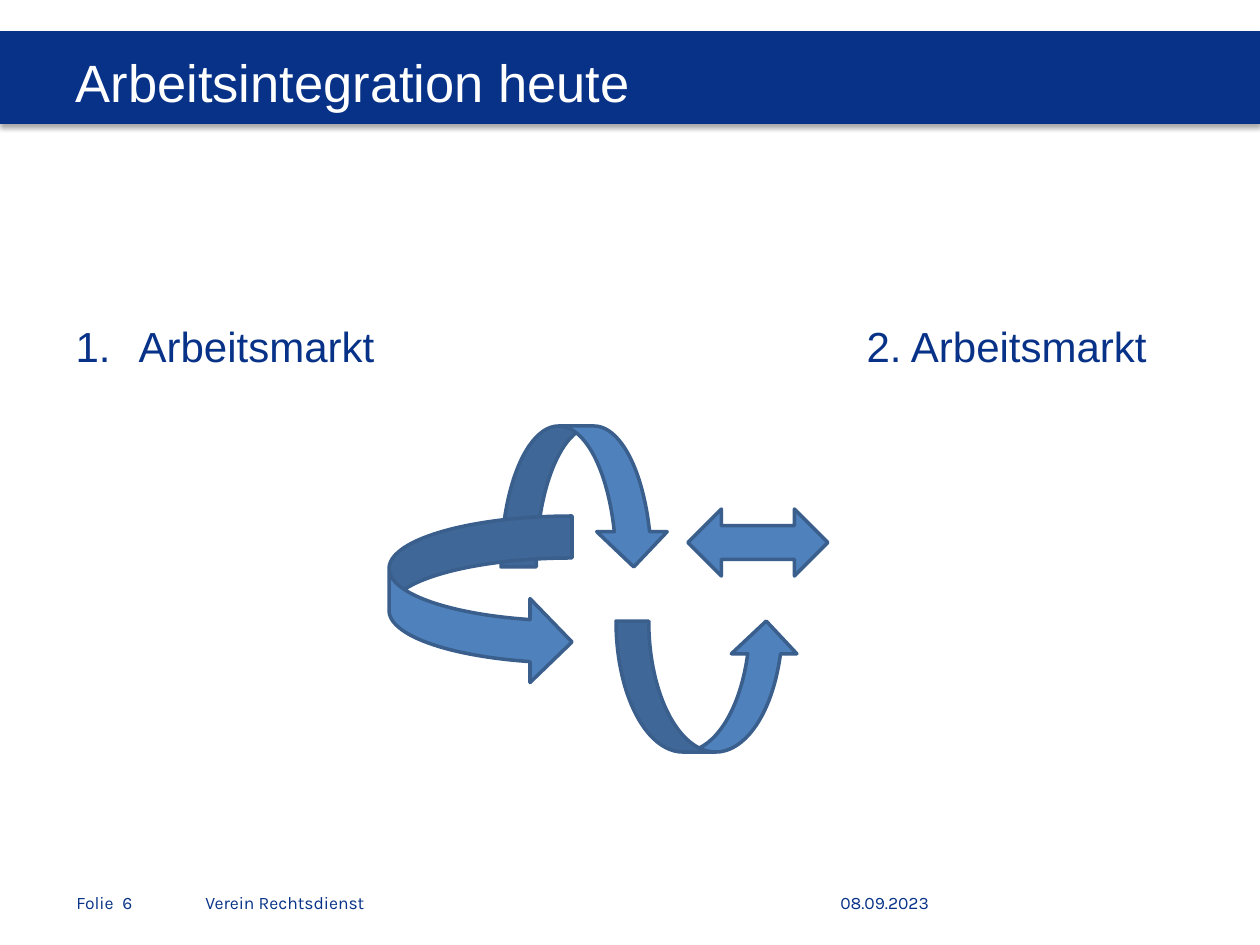
from dataclasses import dataclass

from lxml import etree
from pptx import Presentation
from pptx.dml.color import RGBColor
from pptx.enum.shapes import MSO_SHAPE
from pptx.enum.text import MSO_ANCHOR, MSO_AUTO_SIZE, PP_ALIGN
from pptx.oxml import parse_xml
from pptx.oxml.ns import nsdecls, qn
from pptx.util import Emu, Pt

EMU_PER_PX = 914400 / 126
RECTANGLE = MSO_SHAPE.RECTANGLE
CURVED_DOWN = MSO_SHAPE.CURVED_DOWN_ARROW
CURVED_RIGHT = MSO_SHAPE.CURVED_RIGHT_ARROW
CURVED_UP = MSO_SHAPE.CURVED_UP_ARROW
LEFT_RIGHT = MSO_SHAPE.LEFT_RIGHT_ARROW
MIDDLE, TOP = MSO_ANCHOR.MIDDLE, MSO_ANCHOR.TOP
LEFT = PP_ALIGN.LEFT
NO_AUTOFIT = MSO_AUTO_SIZE.NONE


@dataclass(frozen=True)
class Theme:
    navy: str = "073288"
    white: str = "FFFFFF"
    arrow_fill: str = "4F81BD"
    arrow_line: str = "3A5F8C"
    main_font: str = "Arial"
    footer_font: str = "Karla"
    title_size: int = 30
    body_size: int = 24
    footer_size: int = 10
    arrow_line_width: int = 2


@dataclass(frozen=True)
class Area:
    left: int
    top: int
    width: int
    height: int


@dataclass(frozen=True)
class Arrow:
    preset: MSO_SHAPE
    area: Area


@dataclass(frozen=True)
class Footer:
    text: str
    area: Area
    tab: int = 0


THEME = Theme()
ARROWS = [
    Arrow(CURVED_DOWN, Area(501, 426, 168, 141)),
    Arrow(CURVED_RIGHT, Area(389, 516, 183, 168)),
    Arrow(CURVED_UP, Area(616, 621, 183, 131)),
    Arrow(LEFT_RIGHT, Area(688, 509, 140, 67)),
]
FOOTERS = [
    Footer("08.09.2023", Area(828, 878, 139, 50)),
    Footer("Verein Rechtsdienst", Area(193, 878, 627, 50)),
    Footer("Folie\t6", Area(64, 878, 118, 50), tab=46),
]


def px(value: int) -> Emu:
    return Emu(round(value * EMU_PER_PX))


def bounds(area: Area) -> tuple:
    return px(area.left), px(area.top), px(area.width), px(area.height)


def place(shape, area: Area) -> None:
    shape.left, shape.top, shape.width, shape.height = bounds(area)


def add_tab(para, position: int) -> None:
    tabs = etree.SubElement(para._p.get_or_add_pPr(), qn("a:tabLst"))
    etree.SubElement(tabs, qn("a:tab"), pos=str(px(position)), algn="l")


def write(box, text: str, font: str, size: int, colour: str, anchor=MIDDLE):
    frame = box.text_frame
    frame.word_wrap = True
    frame.auto_size = NO_AUTOFIT
    frame.vertical_anchor = anchor
    para = frame.paragraphs[0]
    para.alignment = LEFT
    para.space_before = Pt(0)
    span = para.add_run()
    span.text = text
    span.font.name = font
    span.font.size = Pt(size)
    span.font.color.rgb = RGBColor.from_string(colour)
    return para


def add_band(page) -> None:
    band = page.shapes.add_shape(RECTANGLE, *bounds(Area(0, 31, 1260, 93)))
    band.fill.solid()
    band.fill.fore_color.rgb = RGBColor.from_string(THEME.navy)
    band.line.fill.background()
    band._element.spPr.append(parse_xml(
        f'<a:effectLst {nsdecls("a")}>'
        '<a:outerShdw blurRad="39370" dist="22860" dir="5400000" rotWithShape="0">'
        '<a:srgbClr val="000000"><a:alpha val="35000"/></a:srgbClr>'
        '</a:outerShdw></a:effectLst>'))
    page.shapes._spTree.insert(2, band._element)


def fill_title(page) -> None:
    title = page.shapes.title
    place(title, Area(63, 38, 1134, 87))
    write(title, "Arbeitsintegration heute", THEME.main_font, THEME.title_size, THEME.white)


def fill_body(page) -> None:
    body = page.placeholders[1]
    place(body, Area(63, 214, 1134, 590))
    body.text_frame.margin_top = px(106)
    para = write(body, "Arbeitsmarkt\t2. Arbeitsmarkt", THEME.main_font,
                 THEME.body_size, THEME.navy, TOP)
    properties = para._p.get_or_add_pPr()
    properties.set("marL", str(px(63)))
    properties.set("indent", str(px(-63)))
    colour = etree.SubElement(properties, qn("a:buClr"))
    etree.SubElement(colour, qn("a:srgbClr"), val=THEME.navy)
    etree.SubElement(properties, qn("a:buFont"), typeface=THEME.main_font)
    etree.SubElement(properties, qn("a:buAutoNum"), type="arabicPeriod")
    add_tab(para, 791)


def add_footer(page, footer: Footer) -> None:
    box = page.shapes.add_textbox(*bounds(footer.area))
    para = write(box, footer.text, THEME.footer_font, THEME.footer_size, THEME.navy)
    if footer.tab:
        add_tab(para, footer.tab)


def add_arrow(page, arrow: Arrow) -> None:
    shape = page.shapes.add_shape(arrow.preset, *bounds(arrow.area))
    shape.shadow.inherit = False
    shape.fill.solid()
    shape.fill.fore_color.rgb = RGBColor.from_string(THEME.arrow_fill)
    shape.line.color.rgb = RGBColor.from_string(THEME.arrow_line)
    shape.line.width = Pt(THEME.arrow_line_width)


def main() -> None:
    deck = Presentation()
    deck.slide_width, deck.slide_height = px(1260), px(945)
    page = deck.slides.add_slide(deck.slide_layouts[1])
    add_band(page)
    fill_title(page)
    fill_body(page)
    for footer in FOOTERS:
        add_footer(page, footer)
    for arrow in ARROWS:
        add_arrow(page, arrow)
    deck.save("out.pptx")


if __name__ == "__main__":
    main()
